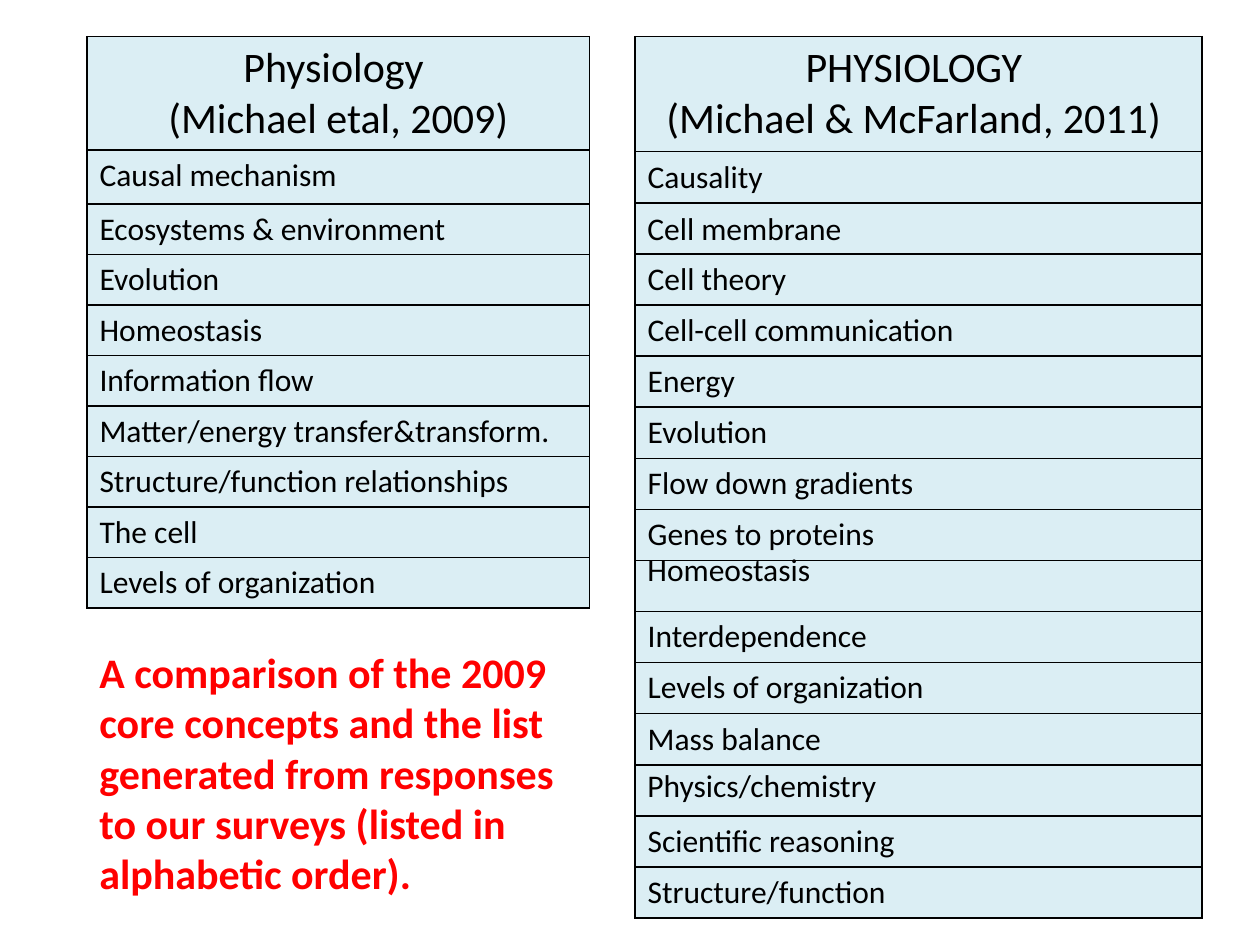
from lxml.etree import SubElement
from pptx import Presentation
from pptx.dml.color import RGBColor
from pptx.enum.text import MSO_AUTO_SIZE as AutoSize, PP_ALIGN as Align
from pptx.oxml.ns import qn
from pptx.util import Pt

BLACK = RGBColor(0x00, 0x00, 0x00)
RED = RGBColor(0xFF, 0x00, 0x00)
PALE_BLUE = RGBColor(0xDB, 0xEE, 0xF4)

HEADER = {"size": Pt(24), "color": BLACK}
BODY = {"size": Pt(18), "color": BLACK}
CAPTION = {"size": Pt(24), "color": RED, "bold": True}

LEFT_X, RIGHT_X, TOP = 49.7, 362.9, 20.9
LEFT_WIDTH, RIGHT_WIDTH = 287.3, 324

CONCEPTS_2009 = [
    "Causal mechanism", "Ecosystems & environment", "Evolution",
    "Homeostasis", "Information flow", "Matter/energy transfer&transform.",
    "Structure/function relationships", "The cell", "Levels of organization",
]
# Empty rows are labelled by the text boxes in FLOATING_LABELS.
CONCEPTS_2011 = [
    "Causality", "", "Cell theory", "Cell-cell communication", "Energy",
    "Evolution", "Flow down gradients", "Genes to proteins", "",
    "Interdependence", "Levels of organization", "Mass balance", "",
    "Scientific reasoning", "Structure/function",
]
# text, top, width
FLOATING_LABELS = [
    ("Cell membrane", 115.9, 126.7),
    ("Homeostasis", 311, 108.7),
    ("Physics/chemistry", 434.2, 147.6),
]


class SlideBuilder:
    def __init__(self, slide, font_name="Calibri"):
        self.slide = slide
        self.font_name = font_name

    def fill_text(self, text_frame, text, style, align=None):
        """Fill the frame with one paragraph for each line of text."""
        text_frame.text = text
        for paragraph in text_frame.paragraphs:
            paragraph.alignment = align
            for run in paragraph.runs:
                run.font.name = self.font_name
                for name, value in style.items():
                    if name == "color":
                        run.font.color.rgb = value
                    else:
                        setattr(run.font, name, value)

    def text_box(self, text, left, top, width, height, style, wrap=True):
        box = self.slide.shapes.add_textbox(Pt(left), Pt(top), Pt(width), Pt(height))
        frame = box.text_frame
        frame.word_wrap = wrap
        frame.auto_size = AutoSize.SHAPE_TO_FIT_TEXT
        self.fill_text(frame, text, style)

    def border(self, cell):
        """Draw a thin black line on all four sides of the cell."""
        properties = cell._tc.get_or_add_tcPr()
        for side in ("a:lnL", "a:lnR", "a:lnT", "a:lnB"):
            line = SubElement(properties, qn(side), w=str(Pt(1)))
            fill = SubElement(line, qn("a:solidFill"))
            SubElement(fill, qn("a:srgbClr"), val=str(BLACK))

    def concept_table(self, title, concepts, left, width, height, row_heights):
        texts = [title, *concepts]
        frame = self.slide.shapes.add_table(
            len(texts), 1, Pt(left), Pt(TOP), Pt(width), Pt(height))
        table = frame.table
        table.first_row = table.horz_banding = False
        for index, (text, row_height) in enumerate(zip(texts, row_heights)):
            table.rows[index].height = Pt(row_height)
            cell = table.cell(index, 0)
            self.border(cell)
            cell.fill.solid()
            cell.fill.fore_color.rgb = PALE_BLUE
            if index == 0:
                self.fill_text(cell.text_frame, text, HEADER, Align.CENTER)
            else:
                self.fill_text(cell.text_frame, text, BODY)
        frame.height = Pt(height)


def main():
    presentation = Presentation()
    presentation.slide_width, presentation.slide_height = Pt(720), Pt(540)
    builder = SlideBuilder(presentation.slides.add_slide(presentation.slide_layouts[6]))

    builder.concept_table(
        "PHYSIOLOGY \n(Michael & McFarland, 2011) ", CONCEPTS_2011,
        RIGHT_X, RIGHT_WIDTH, 496.8, [35.3] + [27.4] * 15)
    builder.text_box(
        "A comparison of the 2009 core concepts and the list generated from "
        "responses to our surveys (listed in alphabetic order).",
        LEFT_X, 365.8, LEFT_WIDTH, 152.6, CAPTION)
    builder.concept_table(
        "Physiology \n(Michael etal, 2009)", CONCEPTS_2009,
        LEFT_X, LEFT_WIDTH, 326.2, [39.6, 31] + [28.1] * 8)
    for text, top, width in FLOATING_LABELS:
        builder.text_box(text, RIGHT_X, top, width, 29, BODY, wrap=False)

    presentation.save("out.pptx")


if __name__ == "__main__":
    main()
